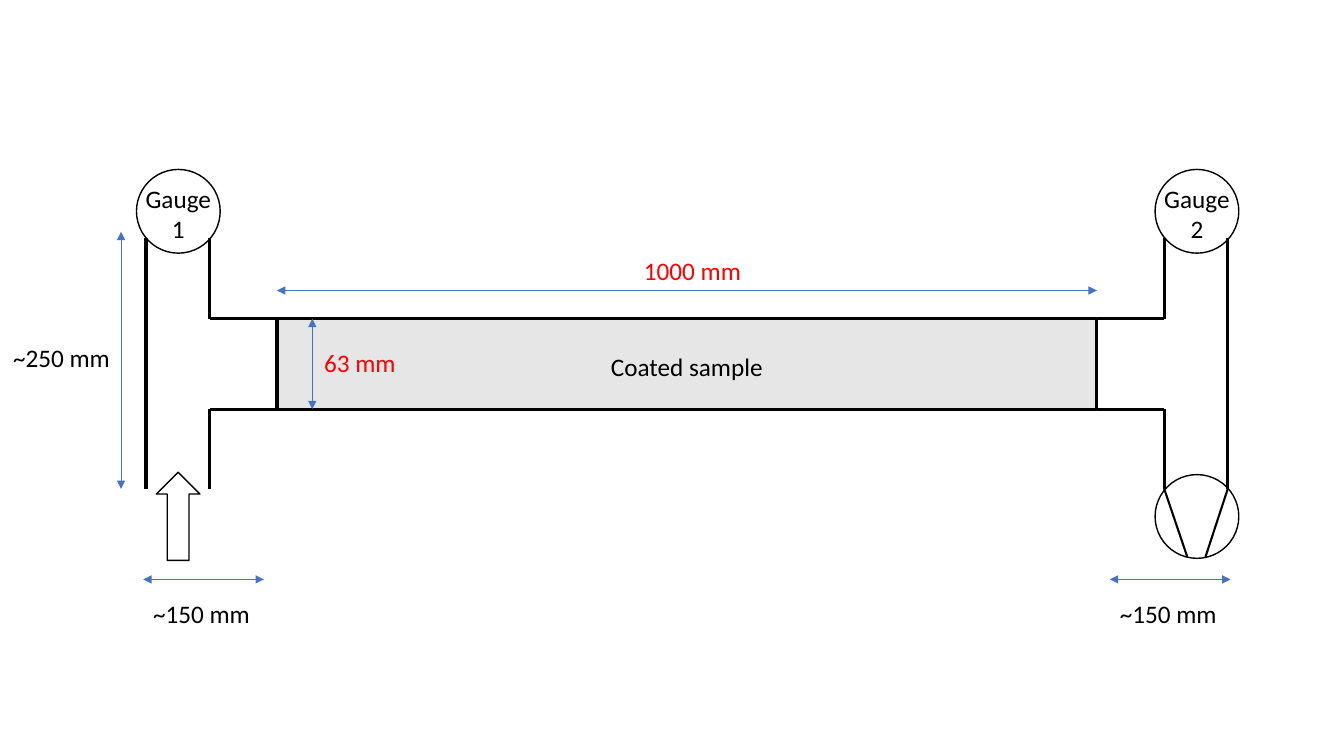
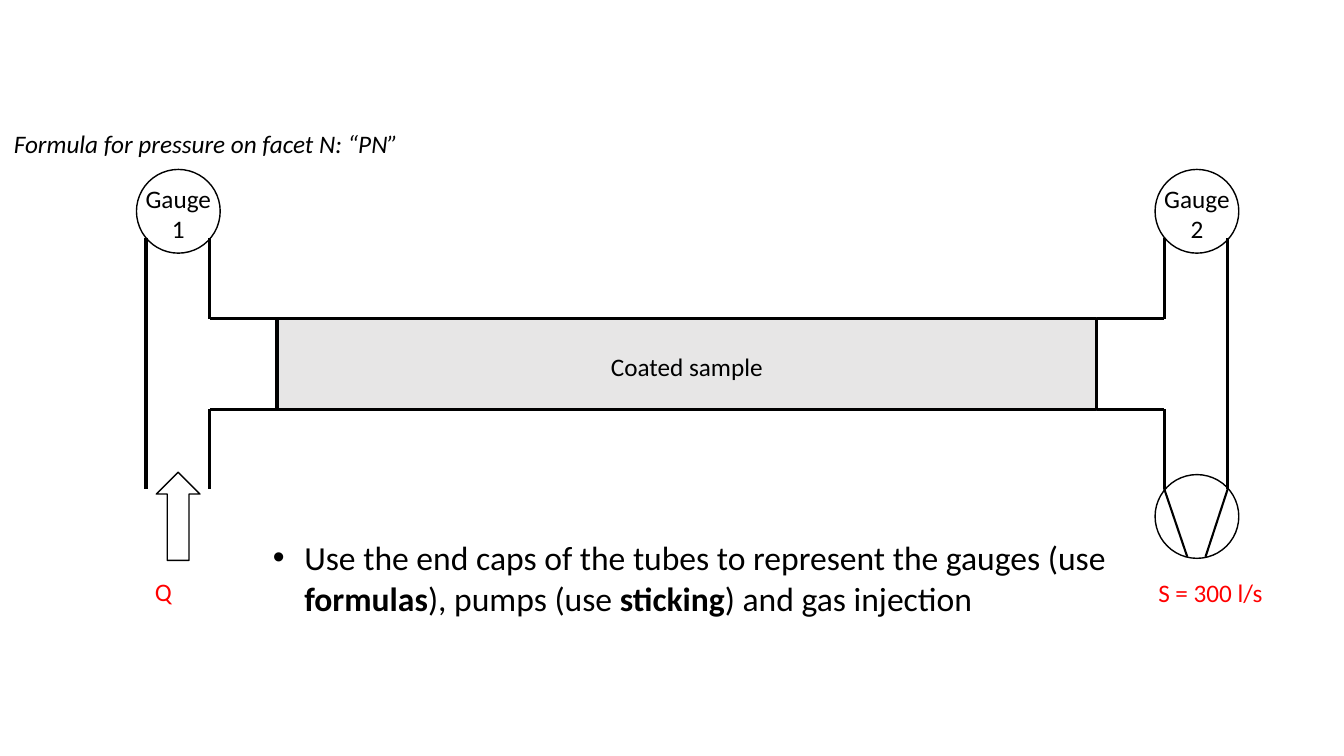
from lxml import etree
from pptx import Presentation
from pptx.dml.color import RGBColor
from pptx.enum import shapes as s, text as t
from pptx.oxml.ns import qn
from pptx.util import Cm, Pt

BLACK = RGBColor(0x00, 0x00, 0x00)
RED = RGBColor(0xFF, 0x00, 0x00)
BLUE = RGBColor(0x44, 0x72, 0xC4)
GRAY = RGBColor(0xE7, 0xE6, 0xE6)
FONT = "Calibri"

# Apparatus geometry in centimetres
SAMPLE_LEFT, SAMPLE_RIGHT = 6.98, 27.64
SAMPLE_TOP, SAMPLE_BOTTOM = 8.03, 10.31
TUBE_TOP, TUBE_BOTTOM = 5.99, 12.32
LEFT_OUTER, LEFT_INNER = 3.68, 5.28
RIGHT_INNER, RIGHT_OUTER = 29.34, 30.94
GAUGE_TOP, PUMP_TOP, CIRCLE = 4.27, 11.96, 2.11
GAUGE_1_LEFT, GAUGE_2_LEFT = 3.44, 29.11


def add_line(slide, start, end, color=BLACK, width=2.25, arrows=False):
    """Draw a straight line between two (x, y) points in centimetres."""
    line = slide.shapes.add_connector(
        s.MSO_CONNECTOR.STRAIGHT, *(Cm(value) for value in (*start, *end)))
    line.line.color.rgb = color
    line.line.width = Pt(width)
    properties = line.element.spPr
    if arrows:
        outline = properties.find(qn("a:ln"))
        for end_tag in ("a:headEnd", "a:tailEnd"):
            etree.SubElement(outline, qn(end_tag), type="triangle")
    etree.SubElement(properties, qn("a:effectLst"))


def add_label(slide, runs, left, top, width, color=BLACK, size=18, wrap=False):
    """Add a one-paragraph text box from (text, bold) runs; return the paragraph."""
    box = slide.shapes.add_textbox(Cm(left), Cm(top), Cm(width), Cm(1.02))
    box.text_frame.word_wrap = wrap
    paragraph = box.text_frame.paragraphs[0]
    paragraph.font.name = FONT
    paragraph.font.size = Pt(size)
    paragraph.font.color.rgb = color
    for text, bold in runs:
        run = paragraph.add_run()
        run.text = text
        if bold:
            run.font.bold = True
    return paragraph


presentation = Presentation()
presentation.slide_width = Cm(33.87)
presentation.slide_height = Cm(19.05)
blank_layout = presentation.slide_layouts[6]
dimension_slide = presentation.slides.add_slide(blank_layout)
model_slide = presentation.slides.add_slide(blank_layout)

# Apparatus, the same on both slides: preset, box, fill, line width, text
parts = [
    (s.MSO_SHAPE.RECTANGLE,
     (SAMPLE_LEFT, SAMPLE_TOP, SAMPLE_RIGHT - SAMPLE_LEFT, SAMPLE_BOTTOM - SAMPLE_TOP),
     GRAY, 2.25, ["Coated sample"]),
    (s.MSO_SHAPE.OVAL, (GAUGE_1_LEFT, GAUGE_TOP, CIRCLE, CIRCLE), None, 1, ["Gauge", "1"]),
    (s.MSO_SHAPE.OVAL, (GAUGE_2_LEFT, GAUGE_TOP, CIRCLE, CIRCLE), None, 1, ["Gauge", "2"]),
    (s.MSO_SHAPE.OVAL, (GAUGE_2_LEFT, PUMP_TOP, CIRCLE, CIRCLE), None, 1, []),
    (s.MSO_SHAPE.UP_ARROW, (3.94, 11.9, 1.1, 2.22), None, 1, []),
]
for slide in (dimension_slide, model_slide):
    for preset, box, fill, line_width, texts in parts:
        shape = slide.shapes.add_shape(preset, *(Cm(value) for value in box))
        shape.shadow.inherit = False
        if fill is None:
            shape.fill.background()
        else:
            shape.fill.solid()
            shape.fill.fore_color.rgb = fill
        shape.line.color.rgb = BLACK
        shape.line.width = Pt(line_width)
        frame = shape.text_frame
        frame.word_wrap = False
        frame.margin_left = frame.margin_right = frame.margin_bottom = 0
        frame.margin_top = Cm(0.12)
        for index, text in enumerate(texts):
            paragraph = frame.add_paragraph() if index else frame.paragraphs[0]
            paragraph.text = text
            paragraph.alignment = t.PP_ALIGN.CENTER
            paragraph.font.name = FONT
            paragraph.font.size = Pt(18)
            paragraph.font.color.rgb = BLACK

    for sample_end, inner, outer in ((SAMPLE_LEFT, LEFT_INNER, LEFT_OUTER),
                                     (SAMPLE_RIGHT, RIGHT_INNER, RIGHT_OUTER)):
        for level, tube_end in ((SAMPLE_TOP, TUBE_TOP), (SAMPLE_BOTTOM, TUBE_BOTTOM)):
            add_line(slide, (sample_end, level), (inner, level))
            add_line(slide, (inner, level), (inner, tube_end))
        add_line(slide, (outer, TUBE_TOP), (outer, TUBE_BOTTOM))

    for tube_side, pump_outlet in ((RIGHT_INNER, 29.92), (RIGHT_OUTER, 30.38)):
        add_line(slide, (tube_side, TUBE_BOTTOM), (pump_outlet, 14.03), width=1.5)

# Slide 1: dimensions as arrow start, arrow end, text, label left, top, width, colour
dimensions = [
    ((SAMPLE_LEFT, 7.32), (SAMPLE_RIGHT, 7.32), "1000 mm", 15.98, 6.3, 2.97, RED),
    ((7.87, SAMPLE_TOP), (7.87, SAMPLE_BOTTOM), "63 mm", 7.92, 8.64, 2.34, RED),
    ((3.05, 5.84), (3.05, TUBE_BOTTOM), "~250 mm", 0.08, 8.51, 2.97, BLACK),
    ((3.61, 14.6), (6.65, 14.6), "~150 mm", 3.61, 14.96, 2.97, BLACK),
    ((27.97, 14.6), (31.01, 14.6), "~150 mm", 27.97, 14.96, 2.97, BLACK),
]
for start, end, text, left, top, width, color in dimensions:
    add_line(dimension_slide, start, end, BLUE, 0.5, arrows=True)
    add_label(dimension_slide, [(text, False)], left, top, width, color)

# Slide 2: simulation notes
instruction = add_label(
    model_slide,
    [("Use the end caps of the tubes to represent the gauges (use ", False),
     ("formulas", True), ("), pumps (use ", False),
     ("sticking", True), (") and gas injection", False)],
    6.63, 13.41, 23.47, size=24, wrap=True)
bullet_properties = instruction._p.get_or_add_pPr()
bullet_properties.set("marL", str(Cm(0.79)))
bullet_properties.set("indent", str(-Cm(0.79)))
bullet_font = etree.Element(qn("a:buFont"), typeface="Arial")
bullet_character = etree.Element(qn("a:buChar"), char="•")
bullet_properties.insert(0, bullet_font)
bullet_properties.insert(1, bullet_character)

formula = add_label(model_slide, [("Formula for pressure on facet N: “PN”", False)],
                    0.1, 3.12, 10.36)
formula.font.italic = True
injection = add_label(model_slide, [("Q", False)], 1.6, 14.4, 5.03, RED, wrap=True)
injection.alignment = t.PP_ALIGN.CENTER
add_label(model_slide, [("S = 300 l/s", False)], 28.94, 14.43, 3.86, RED, wrap=True)

presentation.save("out.pptx")
